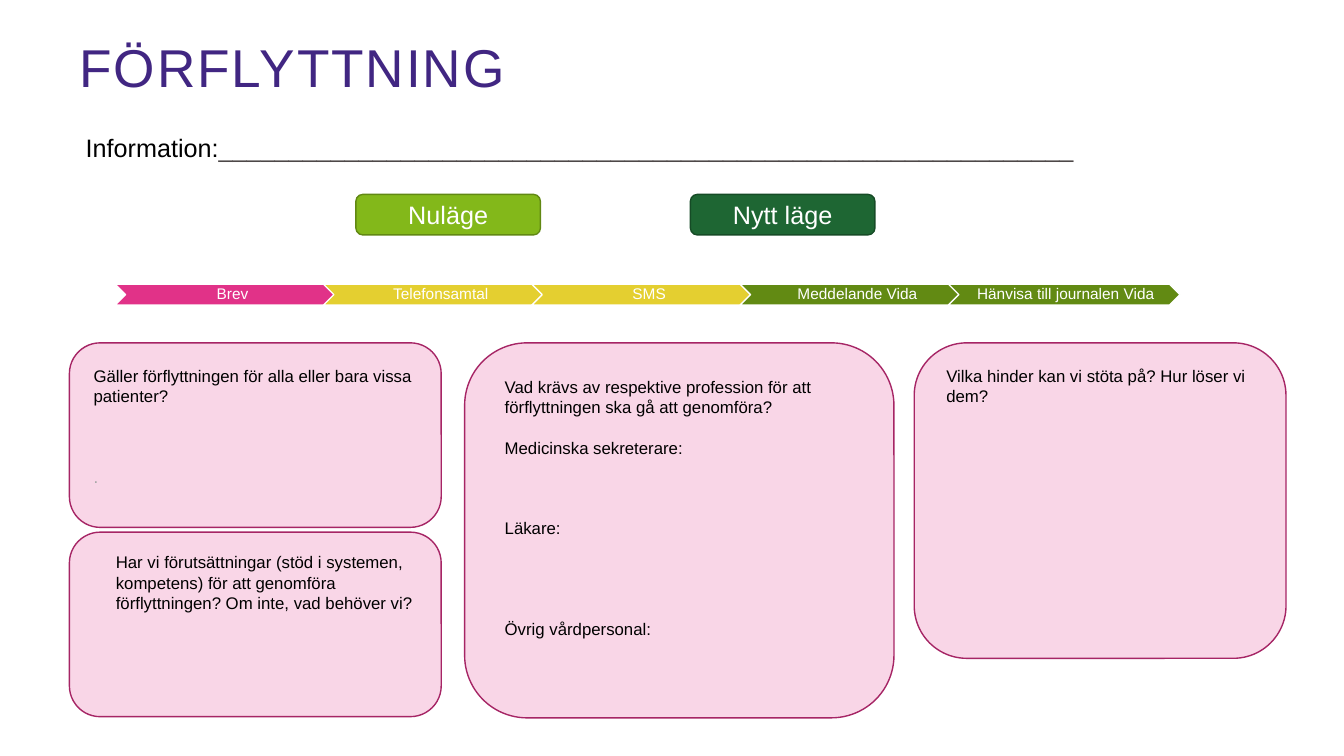
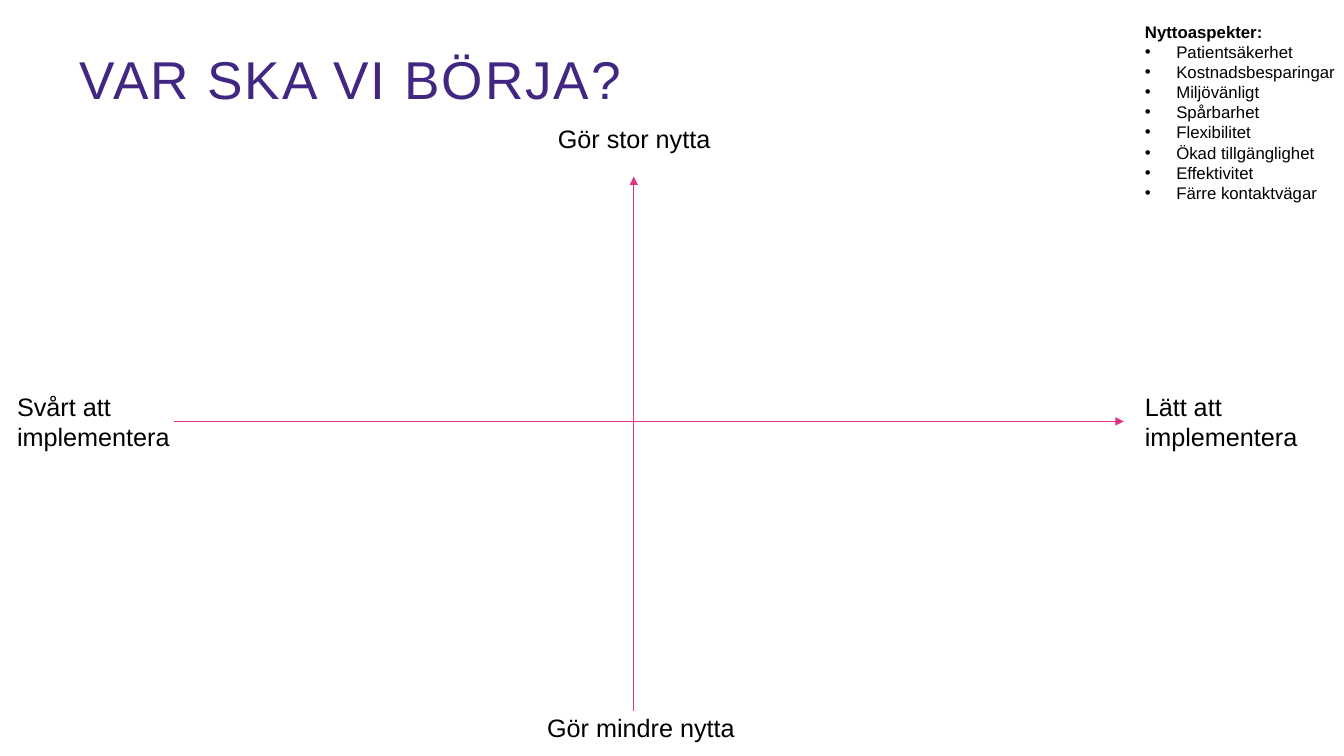
from lxml.etree import SubElement
from pptx import Presentation
from pptx.dml.color import RGBColor
from pptx.enum.shapes import MSO_CONNECTOR, MSO_SHAPE
from pptx.enum.text import MSO_ANCHOR, MSO_AUTO_SIZE, PP_ALIGN
from pptx.oxml.ns import qn
from pptx.util import Cm, Pt

COLORS = {
    "title": "412682", "text": "000000", "white": "FFFFFF",
    "rule": "4D4848", "dot": "A6A6A6",
    "pink": "E13288", "yellow": "E4CF30", "olive": "628A13",
    "lime": "83B81A", "lime_edge": "618813",
    "forest": "1E6633", "forest_edge": "164B26",
    "card": "F9D6E7", "card_edge": "A62565",
}
FONT = "Arial"
LINE_12PT = 14.4


def write(frame, paragraphs, size=12, color="text", align=PP_ALIGN.LEFT,
          anchor=MSO_ANCHOR.TOP, tracking=None, line_spacing=None, margins=None):
    frame.word_wrap = True
    frame.auto_size = MSO_AUTO_SIZE.NONE
    frame.vertical_anchor = anchor
    if margins:
        frame.margin_left, frame.margin_top, frame.margin_right, frame.margin_bottom = map(Cm, margins)
    for index, entry in enumerate(paragraphs):
        paragraph = frame.paragraphs[0] if index == 0 else frame.add_paragraph()
        paragraph.alignment = align
        paragraph.space_before = Pt(entry.get("gap", 0) * LINE_12PT)
        if line_spacing:
            paragraph.line_spacing = line_spacing
        if "bullet" in entry:
            properties = paragraph._p.get_or_add_pPr()
            indent = Cm(0.79) if entry["bullet"] else 0
            properties.set("marL", str(indent))
            properties.set("indent", str(-indent))
            if entry["bullet"]:
                SubElement(properties, qn("a:buFont"), typeface=FONT)
                SubElement(properties, qn("a:buChar"), char="•")
            else:
                SubElement(properties, qn("a:buNone"))
        for words, run_color in entry["runs"]:
            run = paragraph.add_run()
            run.text = words
            run.font.name = FONT
            run.font.size = Pt(size)
            run.font.bold = entry.get("bold", False)
            run.font.color.rgb = RGBColor.from_string(COLORS[run_color or color])
            if tracking:
                run._r.get_or_add_rPr().set("spc", str(tracking))


def add_box(slide, preset, bounds, fill, edge):
    box = slide.shapes.add_shape(preset, *map(Cm, bounds))
    box.shadow.inherit = False
    box.fill.solid()
    box.fill.fore_color.rgb = RGBColor.from_string(COLORS[fill])
    box.line.color.rgb = RGBColor.from_string(COLORS[edge])
    box.line.width = Pt(1)
    return box


deck = Presentation()
deck.slide_width, deck.slide_height = Cm(33.87), Cm(19.05)

slides = []
for layout, heading, height in [(5, "FÖRFLYTTNING", 1.96), (1, "VAR SKA VI BÖRJA?", 2.26)]:
    slide = deck.slides.add_slide(deck.slide_layouts[layout])
    title = slide.shapes.title
    title.left, title.top, title.width, title.height = Cm(1.75), Cm(0.64), Cm(26.87), Cm(height)
    write(title.text_frame, [{"runs": [(heading, None)]}], size=38, color="title",
          anchor=MSO_ANCHOR.BOTTOM, tracking=140)
    slides.append(slide)
move, start = slides

channels = [
    ("Brev", "pink"), ("Telefonsamtal", "yellow"), ("SMS", "yellow"),
    ("Meddelande Vida", "olive"), ("Hänvisa till journalen Vida", "olive"),
]
for step, (channel, fill) in enumerate(channels):
    chevron = add_box(move, MSO_SHAPE.CHEVRON, (2.9 + step * 5.25, 7.16, 5.84, 0.53), fill, "white")
    write(chevron.text_frame, [{"runs": [(channel, None)]}], size=11, color="white",
          align=PP_ALIGN.CENTER, anchor=MSO_ANCHOR.MIDDLE, line_spacing=0.9,
          margins=(0.13, 0.05, 0.05, 0.05))

information = move.shapes.add_textbox(Cm(1.91), Cm(3.21), Cm(25.98), Cm(1.02))
write(information.text_frame, [{"runs": [("Information:", None), ("_" * 61, "rule")]}], size=18)

for state, left, fill, edge in [
    ("Nuläge", 8.97, "lime", "lime_edge"),
    ("Nytt läge", 17.4, "forest", "forest_edge"),
]:
    button = add_box(move, MSO_SHAPE.ROUNDED_RECTANGLE, (left, 4.9, 4.65, 1.02), fill, edge)
    write(button.text_frame, [{"runs": [(state, None)]}], size=18, color="white",
          align=PP_ALIGN.CENTER, anchor=MSO_ANCHOR.MIDDLE)

cards = [
    ((1.75, 8.64, 9.37, 4.65), (2.11, 9.09, 9.22, 3.6), [
        {"runs": [("Gäller förflyttningen för alla eller bara vissa patienter?", None)]},
        {"runs": [(".", "dot")], "gap": 3},
    ]),
    ((1.75, 13.41, 9.37, 4.65), (2.67, 13.79, 8.13, 2.57), [
        {"runs": [("Har vi förutsättningar (stöd i systemen, kompetens) för att genomföra "
                   "förflyttningen? Om inte, vad behöver vi?", None)]},
    ]),
    ((11.71, 8.64, 10.82, 9.45), (12.47, 9.37, 8.94, 8.2), [
        {"runs": [("Vad krävs av respektive profession för att förflyttningen "
                   "ska gå att genomföra?", None)]},
        {"runs": [("Medicinska sekreterare:", None)], "gap": 1},
        {"runs": [("Läkare:", None)], "gap": 3},
        {"runs": [("Övrig vårdpersonal:", None)], "gap": 4},
    ]),
    ((23.04, 8.64, 9.37, 7.95), (23.6, 9.09, 8.13, 2.57), [
        {"runs": [("Vilka hinder kan vi stöta på? Hur löser vi dem?", None)]},
    ]),
]
for card_bounds, question_bounds, questions in cards:
    add_box(move, MSO_SHAPE.ROUNDED_RECTANGLE, card_bounds, "card", "card_edge")
    question = move.shapes.add_textbox(*map(Cm, question_bounds))
    write(question.text_frame, questions)

for ends in [(15.97, 17.91, 15.97, 4.45), (4.39, 10.62, 28.32, 10.62)]:
    axis = start.shapes.add_connector(MSO_CONNECTOR.STRAIGHT, *map(Cm, ends))
    axis.line.color.rgb = RGBColor.from_string(COLORS["pink"])
    axis.line.width = Pt(0.5)
    SubElement(axis.line._get_or_add_ln(), qn("a:tailEnd"), type="triangle")
    SubElement(axis._element.spPr, qn("a:effectLst"))

for label, bounds in [
    ("Gör stor nytta", (13.81, 2.98, 4.83, 1.02)),
    ("Gör mindre nytta", (13.54, 17.83, 5.36, 1.02)),
    ("Lätt att implementera", (28.6, 9.73, 4.83, 1.8)),
    ("Svårt att implementera", (0.18, 9.73, 4.83, 1.8)),
]:
    axis_label = start.shapes.add_textbox(*map(Cm, bounds))
    write(axis_label.text_frame, [{"runs": [(label, None)]}], size=18)

benefits = start.placeholders[1]
benefits.left, benefits.top, benefits.width, benefits.height = Cm(28.6), Cm(0.41), Cm(5.46), Cm(5.64)
aspects = [
    "Patientsäkerhet", "Kostnadsbesparingar", "Miljövänligt", "Spårbarhet",
    "Flexibilitet", "Ökad tillgänglighet", "Effektivitet", "Färre kontaktvägar",
]
write(benefits.text_frame,
      [{"runs": [("Nyttoaspekter:", None)], "bold": True, "bullet": False}]
      + [{"runs": [(aspect, None)], "bullet": True} for aspect in aspects])

deck.save("out.pptx")
